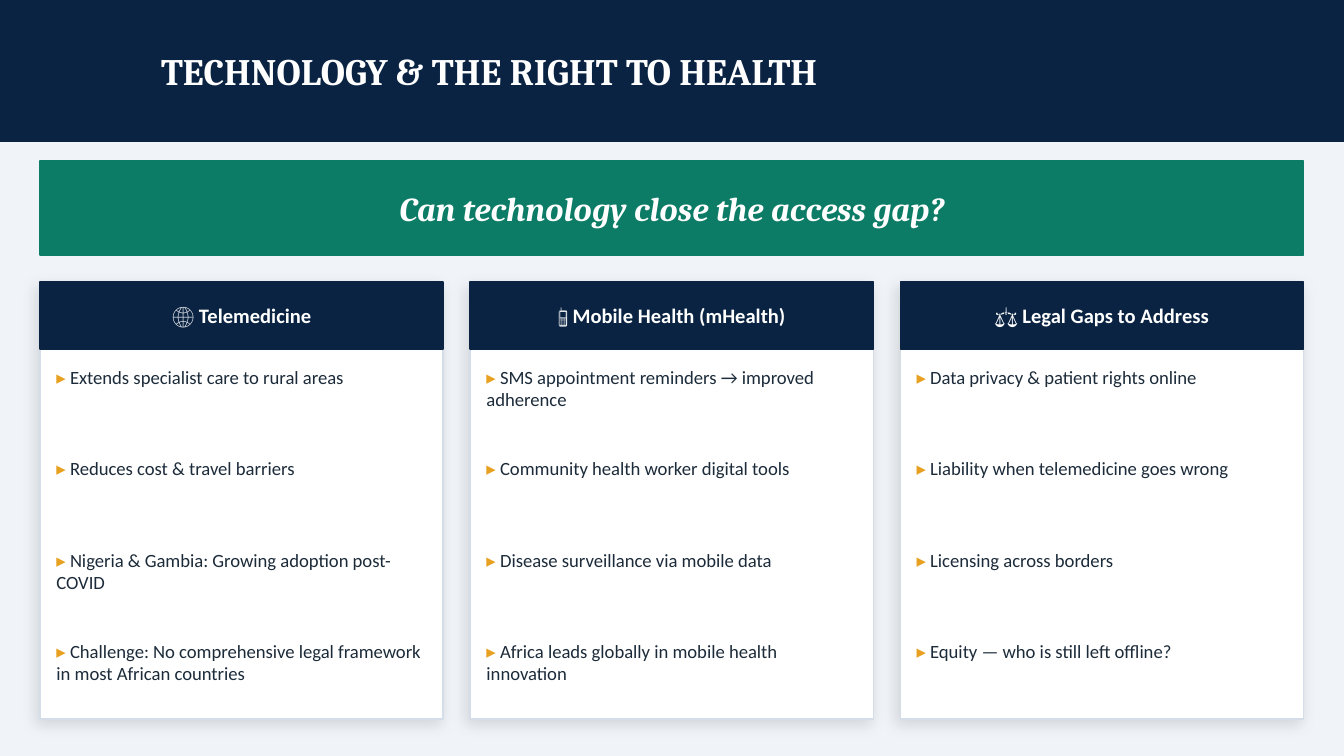
import dataclasses
import typing

import lxml.etree
import pptx
import pptx.dml.color
import pptx.enum.shapes
import pptx.enum.text
import pptx.oxml.ns
import pptx.util

Inches = pptx.util.Inches
Align = pptx.enum.text.PP_ALIGN
Anchor = pptx.enum.text.MSO_ANCHOR


@dataclasses.dataclass(frozen=True)
class Theme:
    background: str = "F0F4F8"
    navy: str = "0A2342"
    green: str = "0D7C66"
    white: str = "FFFFFF"
    border: str = "D4DDE8"
    amber: str = "E8A020"
    ink: str = "1C2B3A"
    shadow: str = "000000"
    heading_font: str = "Cambria"
    body_font: str = "Calibri"
    title_size: int = 20
    question_size: int = 18
    card_title_size: int = 11
    point_size: int = 10


class Area(typing.NamedTuple):
    left: float
    top: float
    width: float
    height: float


class Span(typing.NamedTuple):
    text: str
    size: int
    font: str
    color: str
    bold: bool = False
    italic: bool = False


@dataclasses.dataclass(frozen=True)
class Card:
    title: str
    points: tuple[str, ...]


THEME = Theme()
PAGE_WIDTH = 10
PAGE_HEIGHT = PAGE_WIDTH * 9 / 16
CARD_LEFT, CARD_TOP, CARD_WIDTH, CARD_HEIGHT = 0.3, 2.1, 3, 3.25
CARD_STEP = 3.2
HEADER_HEIGHT = 0.5
POINT_TOP, POINT_STEP, POINT_HEIGHT = 2.72, 0.68, 0.62

CARDS = (
    Card("🌐 Telemedicine", (
        "Extends specialist care to rural areas",
        "Reduces cost & travel barriers",
        "Nigeria & Gambia: Growing adoption post-COVID",
        "Challenge: No comprehensive legal framework in most African countries",
    )),
    Card("📱 Mobile Health (mHealth)", (
        "SMS appointment reminders → improved adherence",
        "Community health worker digital tools",
        "Disease surveillance via mobile data",
        "Africa leads globally in mobile health innovation",
    )),
    Card("⚖️ Legal Gaps to Address", (
        "Data privacy & patient rights online",
        "Liability when telemedicine goes wrong",
        "Licensing across borders",
        "Equity — who is still left offline?",
    )),
)


def rgb(color: str) -> pptx.dml.color.RGBColor:
    return pptx.dml.color.RGBColor.from_string(color)


def add_panel(page, area: Area, fill: str, line: str):
    panel = page.shapes.add_shape(
        pptx.enum.shapes.MSO_SHAPE.RECTANGLE, *map(Inches, area))
    panel.shadow.inherit = False
    panel.fill.solid()
    panel.fill.fore_color.rgb = rgb(fill)
    panel.line.color.rgb = rgb(line)
    panel.line.width = pptx.util.Pt(1)
    return panel


def add_soft_shadow(panel) -> None:
    qn = pptx.oxml.ns.qn
    effects = panel._element.spPr.find(qn("a:effectLst"))
    shadow = lxml.etree.SubElement(
        effects, qn("a:outerShdw"), blurRad=str(pptx.util.Pt(8)),
        dist=str(pptx.util.Pt(3)), dir=str(135 * 60000),
        algn="bl", rotWithShape="0")
    color = lxml.etree.SubElement(shadow, qn("a:srgbClr"), val=THEME.shadow)
    lxml.etree.SubElement(color, qn("a:alpha"), val="12000")


def add_text(page, area: Area, spans: list[Span], align=Align.LEFT,
             anchor=Anchor.MIDDLE, inset: bool = False) -> None:
    frame = page.shapes.add_textbox(*map(Inches, area)).text_frame
    frame.word_wrap = True
    frame.vertical_anchor = anchor
    if not inset:
        frame.margin_left = frame.margin_right = 0
        frame.margin_top = frame.margin_bottom = 0
    para = frame.paragraphs[0]
    para.alignment = align
    for span in spans:
        run = para.add_run()
        run.text = span.text
        run.font.size = pptx.util.Pt(span.size)
        run.font.name = span.font
        run.font.color.rgb = rgb(span.color)
        run.font.bold = span.bold
        run.font.italic = span.italic


def add_card(page, card: Card, left: float) -> None:
    body = Area(left, CARD_TOP, CARD_WIDTH, CARD_HEIGHT)
    add_soft_shadow(add_panel(page, body, THEME.white, THEME.border))
    header = body._replace(height=HEADER_HEIGHT)
    add_panel(page, header, THEME.navy, THEME.navy)
    add_text(page, header._replace(left=left + 0.1, width=CARD_WIDTH - 0.2),
             [Span(card.title, THEME.card_title_size, THEME.body_font,
                   THEME.white, bold=True)], Align.CENTER)
    for row, point in enumerate(card.points):
        area = Area(left + 0.12, POINT_TOP + row * POINT_STEP,
                    CARD_WIDTH - 0.24, POINT_HEIGHT)
        add_text(page, area, [
            Span("▸ ", THEME.point_size, THEME.body_font, THEME.amber, bold=True),
            Span(point, THEME.point_size, THEME.body_font, THEME.ink),
        ], anchor=Anchor.TOP)


def main() -> None:
    deck = pptx.Presentation()
    deck.slide_width, deck.slide_height = Inches(PAGE_WIDTH), Inches(PAGE_HEIGHT)
    page = deck.slides.add_slide(deck.slide_layouts[6])
    page.background.fill.solid()
    page.background.fill.fore_color.rgb = rgb(THEME.background)

    add_panel(page, Area(0, 0, PAGE_WIDTH, 1.05), THEME.navy, THEME.navy)
    add_text(page, Area(1.1, 0, 8.5, 1.05),
             [Span("TECHNOLOGY & THE RIGHT TO HEALTH", THEME.title_size,
                   THEME.heading_font, THEME.white, bold=True)], inset=True)
    add_panel(page, Area(0.3, 1.2, 9.4, 0.7), THEME.green, THEME.green)
    add_text(page, Area(0.4, 1.2, 9.2, 0.7),
             [Span("Can technology close the access gap?", THEME.question_size,
                   THEME.heading_font, THEME.white, bold=True, italic=True)],
             Align.CENTER, inset=True)
    for column, card in enumerate(CARDS):
        add_card(page, card, CARD_LEFT + column * CARD_STEP)
    deck.save("out.pptx")


if __name__ == "__main__":
    main()
